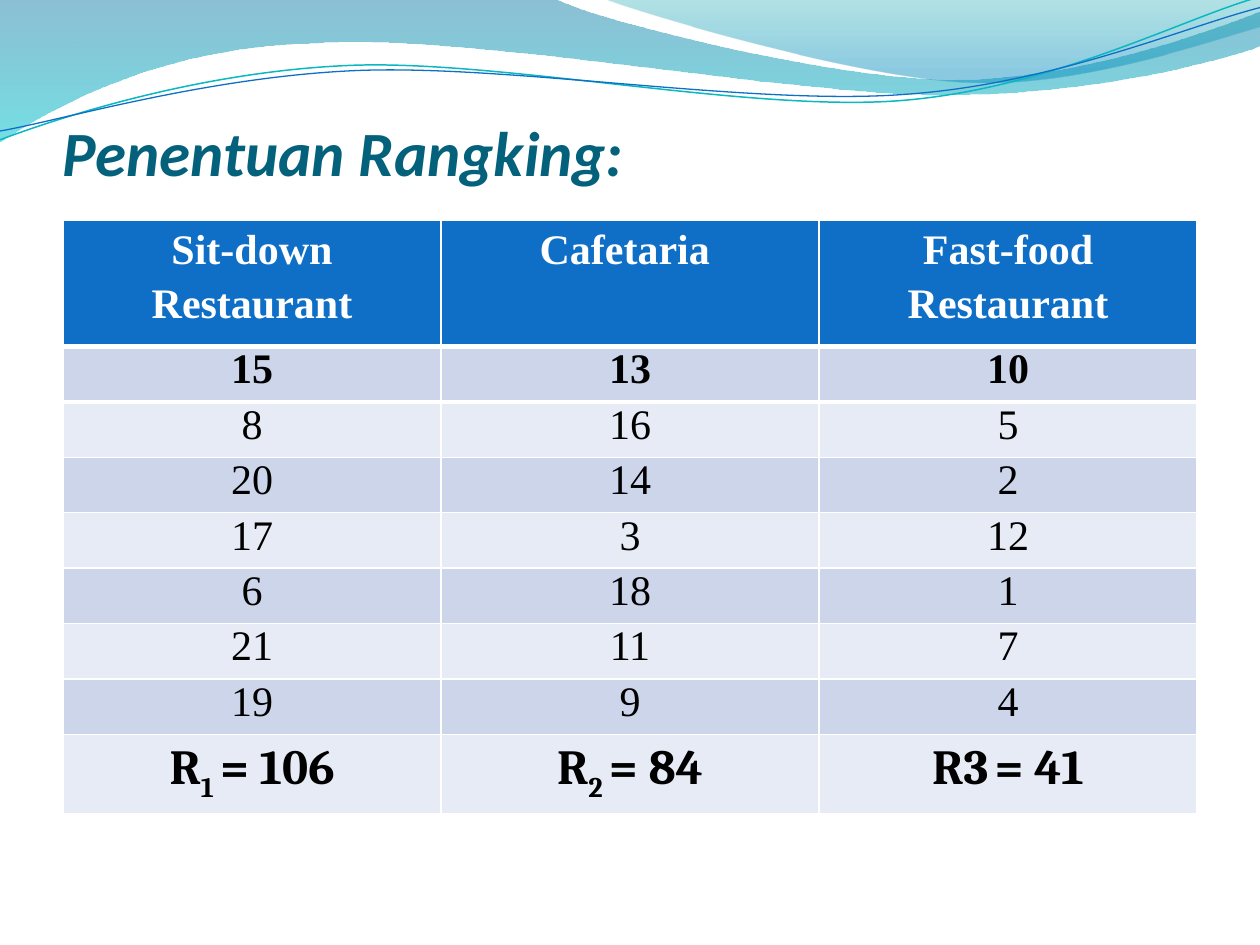
from math import cos, radians, sin

from lxml import etree
from pptx import Presentation
from pptx.dml.color import RGBColor
from pptx.enum import text as t
from pptx.oxml.ns import qn
from pptx.util import Inches, Pt

HUE = {"title": "04617B", "head": "0F6FC6", "odd": "CCD5EA", "even": "E7EBF5",
       "white": "FFFFFF", "black": "000000", "teal": "0AB8BF", "blue": "0F6FC6",
       "deep": "0074A1", "cyan": "00C6CF", "sea": "00A1A9", "sky": "008BBF"}

TITLE = "Penentuan Rangking:"
HEADS = ["Sit-down Restaurant", "Cafetaria ", "Fast-food Restaurant"]
RANKS = [(15, 13, 10), (8, 16, 5), (20, 14, 2), (17, 3, 12),
         (6, 18, 1), (21, 11, 7), (19, 9, 4)]
SUMS = [("R", "1 ", "= 106"), ("R", "2 ", "= 84"), ("R3", " ", "= 41")]

WAVES = [
    ((-0.01, -0.01, 10.02, 1.14),
     [(0, 0), (4.4, -0.01), (4.76, 0.17, 6.64, 0.63, 7.58, 0.63),
      (8.53, 0.63, 9.58, 0.26, 10, 0.09), (10.01, 0.36),
      (9.83, 0.44, 8.7, 0.76, 7.46, 0.75), (6.22, 0.75, 3.82, 0.28, 2.57, 0.34),
      (1.29, 0.36, 0.46, 0.83, -0.01, 1.13), (0, 0)],
     [("deep", 0, 45), ("cyan", 1, 55)]),
    ((4.79, -0.01, 5.21, 0.7),
     [(4.79, -0.01), (5.09, 0.11, 6.82, 0.62, 7.69, 0.65),
      (8.56, 0.69, 9.61, 0.32, 10, 0.21), (10, 0), (4.79, -0.01)],
     [("sea", 0, 30), ("sky", 0.8, 45)]),
]
LINES = [
    ((-0.02, 0.22, 10.02, 0.71),
     [(0, 1.11), (0.48, 0.93, 1.58, 0.57, 2.77, 0.52),
      (3.95, 0.47, 5.93, 0.89, 7.13, 0.8), (8.33, 0.71, 9.38, 0.15, 9.98, -0.02)],
     "teal", 0.85),
    ((-0.02, 0.3, 10.03, 0.58),
     [(0, 1.04), (0.47, 0.96, 1.64, 0.61, 2.83, 0.56),
      (4.03, 0.51, 5.97, 0.84, 7.17, 0.75), (8.36, 0.67, 9.41, 0.21, 10, 0.06)],
     "blue", 0.75),
]
TILT = -2.7


def rgb(name):
    return RGBColor.from_string(HUE[name])


def outline(slide, box, path, close, tilt=0):
    left, top, wide, high = box
    turn = radians(-tilt)

    def local(x, y):
        x, y = x - left - wide / 2, y - top - high / 2
        return (Inches(x * cos(turn) - y * sin(turn) + wide / 2),
                Inches(x * sin(turn) + y * cos(turn) + high / 2))

    pen = slide.shapes.build_freeform(0, 0)
    pen.add_line_segments([(Inches(wide), Inches(high))], close=False)
    shape = pen.convert_to_shape()
    shape.left, shape.top, shape.width, shape.height = map(Inches, box)
    shape.rotation = tilt
    shape.shadow.inherit = False
    trail = next(shape._element.iter(qn("a:path")))
    for step in list(trail):
        trail.remove(step)
    for n, seg in enumerate(path):
        kind = "moveTo" if n == 0 else "lnTo" if len(seg) == 2 else "cubicBezTo"
        step = etree.SubElement(trail, qn("a:" + kind))
        for x, y in zip(seg[::2], seg[1::2]):
            x, y = local(x, y)
            etree.SubElement(step, qn("a:pt"), x=str(x), y=str(y))
    if close:
        etree.SubElement(trail, qn("a:close"))
    return shape


def add_wave(slide, box, path, stops):
    shape = outline(slide, box, path, True)
    shape.line.fill.background()
    shape.fill.gradient()
    shape.fill.gradient_angle = 270
    for stop, (name, pos, _) in zip(shape.fill.gradient_stops, stops):
        stop.color.rgb = rgb(name)
        stop.position = pos
    for tint, (_, _, alpha) in zip(shape._element.iter(qn("a:srgbClr")), stops):
        etree.SubElement(tint, qn("a:alpha")).set("val", str(alpha * 1000))


def add_curve(slide, box, path, name, width):
    shape = outline(slide, box, path, False, TILT)
    shape.fill.background()
    shape.line.color.rgb = rgb(name)
    shape.line.width = Pt(width)


def style(par, face, size, name, bold, italic=False):
    font = par.font
    font.name, font.size, font.bold, font.italic = face, Pt(size), bold, italic
    font.color.rgb = rgb(name)


def add_title(slide):
    box = slide.shapes.add_textbox(Inches(0.5), Inches(0.75), Inches(9), Inches(0.75))
    frame = box.text_frame
    frame.word_wrap = True
    frame.vertical_anchor = t.MSO_ANCHOR.BOTTOM
    frame.margin_left = frame.margin_right = frame.margin_bottom = 0
    frame.text = TITLE
    style(frame.paragraphs[0], "Calibri", 36, "title", True, True)


def add_edges(cell, **widths):
    props = cell._tc.get_or_add_tcPr()
    for n, (side, width) in enumerate(widths.items()):
        edge = etree.Element(qn("a:ln" + side), w=str(Pt(width)))
        fill = etree.SubElement(edge, qn("a:solidFill"))
        etree.SubElement(fill, qn("a:srgbClr"), val=HUE["white"])
        props.insert(n, edge)


def fill_cell(cell, parts, fill, side, face, size, name, bold):
    cell.fill.solid()
    cell.fill.fore_color.rgb = rgb(fill)
    if side is not None:
        cell.margin_left = cell.margin_right = Inches(side)
        cell.margin_top = cell.margin_bottom = 0
    par = cell.text_frame.paragraphs[0]
    par.alignment = t.PP_ALIGN.CENTER
    style(par, face, size, name, bold)
    for n, part in enumerate(parts):
        run = par.add_run()
        run.text = part
        if n == 1:
            run._r.get_or_add_rPr().set("baseline", "-25000")
    return par


def add_ranks(slide):
    tall = [1] + [0.44] * len(RANKS) + [0.61]
    table = slide.shapes.add_table(len(tall), len(HEADS), Inches(0.5), Inches(1.75),
                                   Inches(9), Inches(sum(tall))).table
    for row, high in zip(table.rows, tall):
        row.height = Inches(high)
    serif = "Times New Roman"
    for c, head in enumerate(HEADS):
        cell = table.cell(0, c)
        fill_cell(cell, [head], "head", 0.07, serif, 24, "white", True).line_spacing = 1.15
        add_edges(cell, L=1, R=1, T=1, B=3)
        add_edges(table.cell(1, c), T=3)
        for r, ranks in enumerate(RANKS, 1):
            fill_cell(table.cell(r, c), [str(ranks[c])], "odd" if r % 2 else "even",
                      0, serif, 24, "black", r == 1)
        fill_cell(table.cell(len(tall) - 1, c), SUMS[c], "even", None,
                  "Cambria", 28, "black", True)


def main():
    deck = Presentation()
    deck.slide_width, deck.slide_height = Inches(10), Inches(7.5)
    slide = deck.slides.add_slide(deck.slide_layouts[6])
    for wave in WAVES:
        add_wave(slide, *wave)
    for line in LINES:
        add_curve(slide, *line)
    add_title(slide)
    add_ranks(slide)
    deck.save("out.pptx")


if __name__ == "__main__":
    main()
